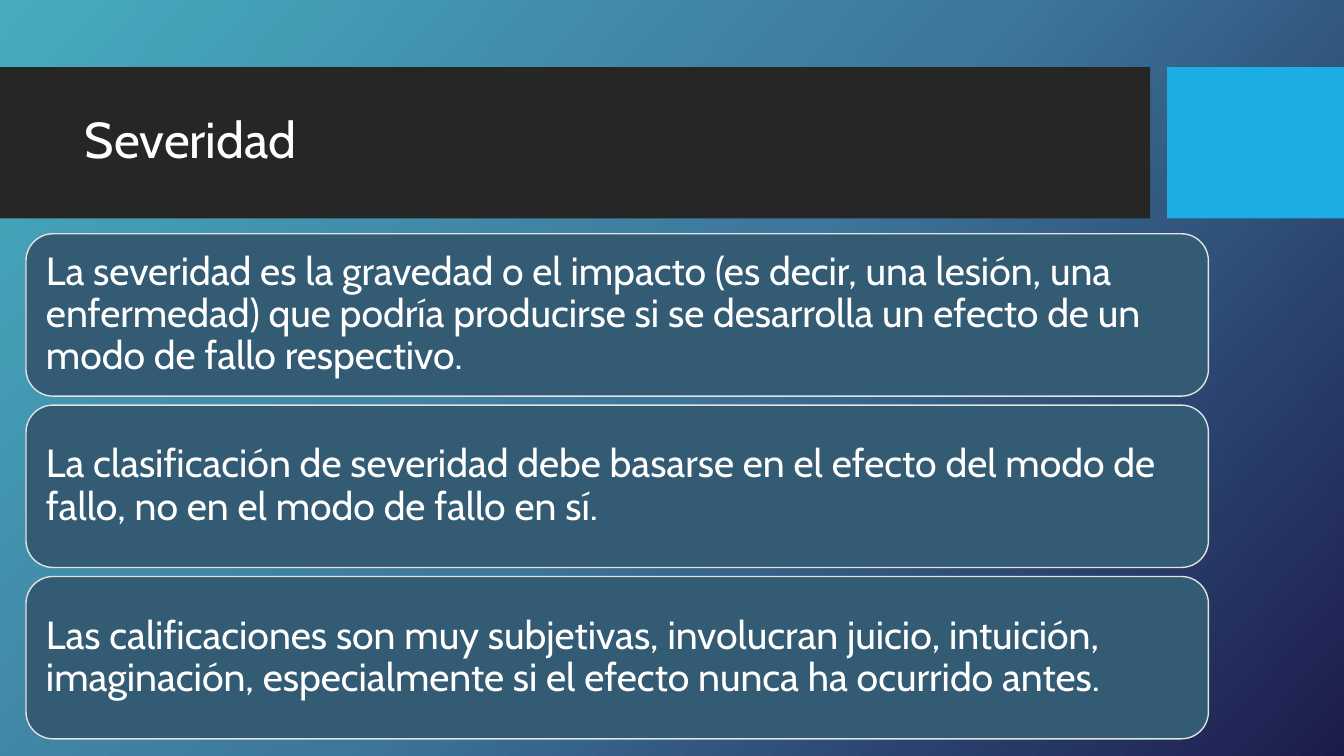
from copy import deepcopy
from dataclasses import dataclass
from typing import Any

from pptx import Presentation
from pptx import util as u
from pptx.dml.color import RGBColor
from pptx.enum import shapes, text
from pptx.oxml.ns import qn


@dataclass(frozen=True)
class Theme:
    font: str = "Cabin"
    head: float = 36
    body: float = 28
    ink: str = "FFFFFF"
    dark: str = "262626"
    blue: str = "1CADE4"
    card: str = "335B74"
    edge: str = "DFE3E5"
    sky: tuple[str, ...] = ("46ACBE", "3E779B", "1C1C4C")
    angle: float = 318


@dataclass(frozen=True)
class Box:
    left: float
    top: float
    width: float
    height: float

    def spots(self) -> list[u.Length]:
        return [u.Pt(n) for n in (self.left, self.top, self.width, self.height)]


@dataclass(frozen=True)
class Panel:
    box: Box
    fill: str
    words: str = ""


THEME = Theme()
KIND = shapes.MSO_SHAPE
TITLE = Box(53.3, 59, 756.7, 85)
BARS = [
    Panel(Box(0, 48, 821.5, 108), THEME.dark),
    Panel(Box(833.75, 48, 126.25, 108), THEME.blue),
]
POINTS = [
    "La severidad es la gravedad o el impacto (es decir, una lesión, una "
    "enfermedad) que podría producirse si se desarrolla un efecto de un "
    "modo de fallo respectivo.",
    "La clasificación de severidad debe basarse en el efecto del modo de "
    "fallo, no en el modo de fallo en sí.",
    "Las calificaciones son muy subjetivas, involucran juicio, intuición, "
    "imaginación, especialmente si el efecto nunca ha ocurrido antes.",
]
CARDS = [
    Panel(Box(18.6, 167 + 122.4 * row, 844.6, 116), THEME.card, words)
    for row, words in enumerate(POINTS)
]


def apply(target: Any, values: dict[str, Any]) -> None:
    for name, value in values.items():
        setattr(target, name, value)


def paint(slide: Any) -> None:
    fill = slide.background.fill
    fill.gradient()
    fill.gradient_angle = THEME.angle
    stops = slide.element.find(".//" + qn("a:gsLst"))
    stops.insert(1, deepcopy(stops[0]))
    last = len(THEME.sky) - 1
    for place, (stop, tint) in enumerate(zip(fill.gradient_stops, THEME.sky)):
        stop.position = place / last
        stop.color.rgb = RGBColor.from_string(tint)


def write(shape: Any, words: str, size: float, pad: dict[str, Any], after: float = 0) -> None:
    frame = shape.text_frame
    apply(frame, {
        "text": words,
        "word_wrap": True,
        "auto_size": text.MSO_AUTO_SIZE.NONE,
        "vertical_anchor": text.MSO_ANCHOR.MIDDLE,
        **pad,
    })
    para = frame.paragraphs[0]
    apply(para, {
        "alignment": text.PP_ALIGN.LEFT,
        "line_spacing": 0.9,
        "space_before": u.Pt(0),
        "space_after": u.Pt(after),
    })
    font = para.runs[0].font
    apply(font, {"name": THEME.font, "size": u.Pt(size)})
    font.color.rgb = RGBColor.from_string(THEME.ink)


def draw(slide: Any, panel: Panel, kind: Any) -> Any:
    shape = slide.shapes.add_shape(kind, *panel.box.spots())
    shape.shadow.inherit = False
    shape.fill.solid()
    shape.fill.fore_color.rgb = RGBColor.from_string(panel.fill)
    shape.line.fill.background()
    return shape


def main() -> None:
    deck = Presentation()
    apply(deck, {"slide_width": u.Pt(960), "slide_height": u.Pt(540)})
    slide = deck.slides.add_slide(deck.slide_layouts[5])
    paint(slide)

    for bar in BARS:
        draw(slide, bar, KIND.RECTANGLE)

    title = slide.shapes.title
    apply(title, dict(zip(("left", "top", "width", "height"), TITLE.spots())))
    write(title, "Severidad", THEME.head, {})
    slide.shapes.element.append(title.element)

    sides = ("left", "top", "right", "bottom")
    pad = {f"margin_{side}": u.Pt(8.64) for side in sides}
    for card in CARDS:
        shape = draw(slide, card, KIND.ROUNDED_RECTANGLE)
        shape.line.color.rgb = RGBColor.from_string(THEME.edge)
        shape.line.width = u.Pt(1)
        write(shape, card.words, THEME.body, pad, THEME.body * 0.35)

    deck.save("out.pptx")


if __name__ == "__main__":
    main()
